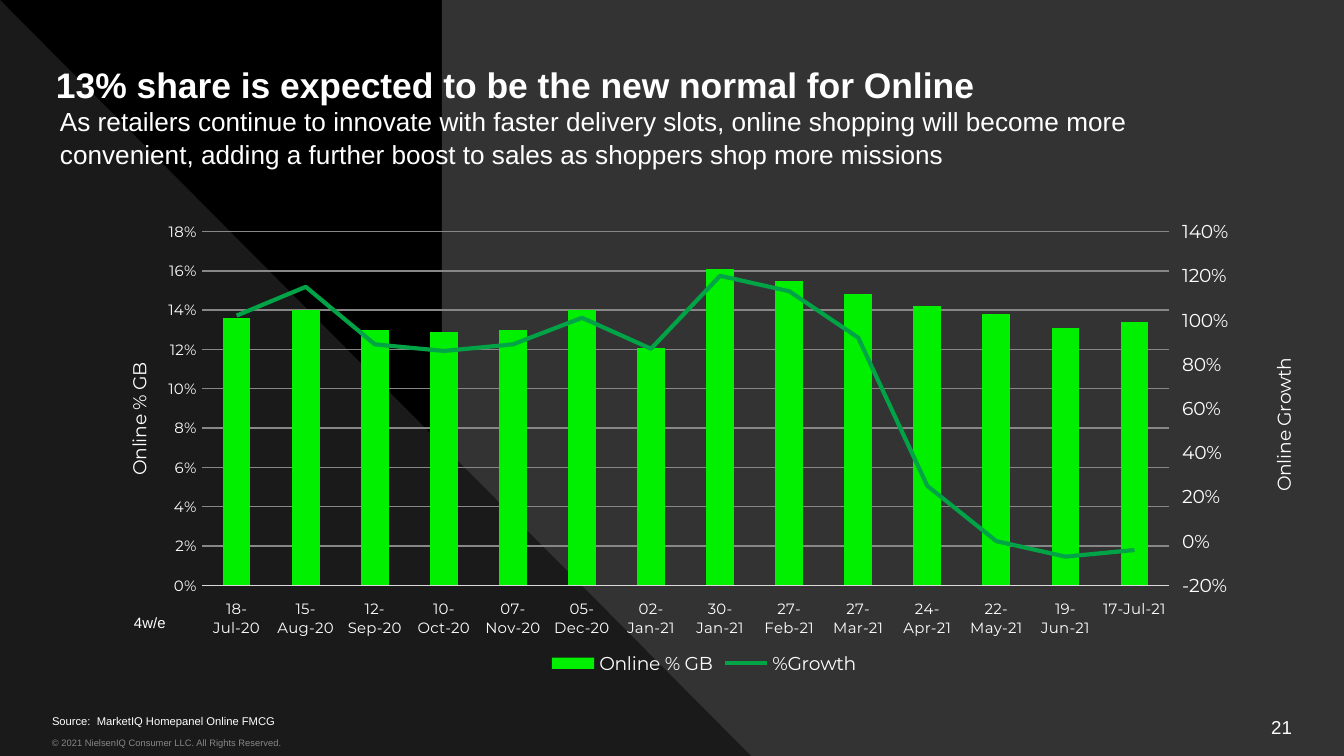
from copy import deepcopy
from lxml.etree import SubElement
from pptx import Presentation
from pptx.chart.axis import CategoryAxis, ValueAxis
from pptx.chart.data import CategoryChartData
from pptx.dml.color import RGBColor
from pptx.enum.chart import XL_CHART_TYPE as Kind, XL_LEGEND_POSITION as Legend
from pptx.enum.chart import XL_MARKER_STYLE as Marker, XL_TICK_MARK as Tick
from pptx.enum.chart import XL_TICK_LABEL_POSITION as Label
from pptx.enum.shapes import MSO_SHAPE as Shape
from pptx.enum.text import MSO_ANCHOR as Anchor, MSO_AUTO_SIZE as Fit, PP_ALIGN as Align
from pptx.oxml.ns import qn
from pptx.util import Pt

PX = 914400 / 134.4
WHITE, GRID = "FFFFFF", "D9D9D9"
hue = RGBColor.from_string


def write(box, text, spot, size, inset, color=WHITE, bold=False,
          anchor=Anchor.TOP, align=Align.LEFT):
    box.left, box.top, box.width, box.height = [round(n * PX) for n in spot]
    frame = box.text_frame
    frame.word_wrap, frame.auto_size = True, Fit.NONE
    frame.vertical_anchor = anchor
    frame.margin_left = frame.margin_right = round(inset[0] * PX)
    frame.margin_top = frame.margin_bottom = round(inset[1] * PX)
    para = frame.paragraphs[0]
    para.alignment, para.space_before = align, Pt(0)
    run = para.add_run()
    run.text = text
    font = run.font
    font.name, font.size, font.bold = "Arial", Pt(size), bold
    font.color.rgb = hue(color)
    return para


def place(part, inner=False, **spots):
    """Set a manual layout, in fractions of the chart."""
    node = part.find(qn("c:layout"))
    if node is None:
        node = SubElement(part, qn("c:layout"))
        part.insert(1 if part.find(qn("c:tx")) is not None else 0, node)
    lay = SubElement(node, qn("c:manualLayout"))
    if inner:
        SubElement(lay, qn("c:layoutTarget")).set("val", "inner")
    for key in ("x", "y"):
        SubElement(lay, qn(f"c:{key}Mode")).set("val", "edge")
    for key, val in spots.items():
        SubElement(lay, qn(f"c:{key}")).set("val", str(val))


deck = Presentation()
deck.slide_width, deck.slide_height = round(1344 * PX), round(756 * PX)
slide = deck.slides.add_slide(deck.slide_layouts[0])
shapes = slide.shapes

# Background
back = slide.background.fill
back.solid()
back.fore_color.rgb = hue("000000")
panels = [(Shape.RECTANGLE, 442, 902, "333333"), (Shape.RIGHT_TRIANGLE, 0, 751, "1A1A1A")]
for rank, (form, left, width, color) in enumerate(panels):
    panel = shapes.add_shape(form, round(left * PX), 0, round(width * PX), deck.slide_height)
    panel.shadow.inherit = False
    panel.fill.solid()
    panel.fill.fore_color.rgb = hue(color)
    panel.line.fill.background()
    shapes.element.insert(2 + rank, panel.element)

# Title and source
write(shapes.title, "13% share is expected to be the new normal for Online",
      (56, 50, 1280, 118), 19, (0, 13), bold=True)
write(slide.placeholders[1], "Source:  MarketIQ Homepanel Online FMCG",
      (52, 714, 1199, 27), 6, (0, 13), anchor=Anchor.BOTTOM)

# Chart data
days = ["18-Jul-20", "15-Aug-20", "12-Sep-20", "10-Oct-20", "07-Nov-20", "05-Dec-20",
        "02-Jan-21", "30-Jan-21", "27-Feb-21", "27-Mar-21", "24-Apr-21", "22-May-21",
        "19-Jun-21", "17-Jul-21"]
share = [0.136, 0.14, 0.13, 0.129, 0.13, 0.14, 0.121,
         0.161, 0.155, 0.148, 0.142, 0.138, 0.131, 0.134]
growth = [1.02, 1.15, 0.89, 0.86, 0.89, 1.01, 0.87,
          1.2, 1.13, 0.92, 0.25, 0, -0.07, -0.04]
data = CategoryChartData(number_format="0%")
data.categories = days
data.add_series("Online % GB", share)
data.add_series("%Growth", growth)
chart = shapes.add_chart(Kind.COLUMN_CLUSTERED, *[round(n * PX) for n in (92, 208, 1224, 472)],
                         data).chart
chart.has_title = False
chart.font.name, chart.font.size = "Montserrat", Pt(10)
chart.font.color.rgb = hue(WHITE)
chart.has_legend = True
chart.legend.position, chart.legend.include_in_layout = Legend.BOTTOM, False
chart.legend.font.name, chart.legend.font.size = "Montserrat", Pt(10)
chart.legend.font.color.rgb = hue(WHITE)

# Bars
bars = chart.plots[0]
bars.gap_width, bars.vary_by_categories = 150, False
fill = bars.series[0].format.fill
fill.solid()
fill.fore_color.rgb = hue("00F000")

# Date axis
dates = chart.category_axis
dates.major_tick_mark = Tick.NONE
dates.tick_label_position = Label.LOW
dates.format.line.color.rgb = hue(GRID)
dates.format.line.width = Pt(0.75)

# Second pair of axes
plot = chart.plots[0].series[0].format.fill and bars.series[0]._element.getparent().getparent()
cat, val = dates._element, chart.value_axis._element
cat2, val2 = deepcopy(cat), deepcopy(val)
val.addnext(val2)
val2.addnext(cat2)
for axis, own, other in ((cat2, "5001", "5002"), (val2, "5002", "5001")):
    axis.find(qn("c:axId")).set("val", own)
    axis.find(qn("c:crossAx")).set("val", other)
val2.find(qn("c:axPos")).set("val", "r")
val2.find(qn("c:crosses")).set("val", "max")
CategoryAxis(cat2).visible = False

# Growth line on the second axes
bar = plot.find(qn("c:barChart"))
line = plot.makeelement(qn("c:lineChart"))
bar.addnext(line)
SubElement(line, qn("c:grouping")).set("val", "standard")
SubElement(line, qn("c:varyColors")).set("val", "0")
ser = bar.findall(qn("c:ser"))[1]
for flag in ser.findall(qn("c:invertIfNegative")):
    ser.remove(flag)
line.append(ser)
SubElement(line, qn("c:marker")).set("val", "1")
for own in ("5001", "5002"):
    SubElement(line, qn("c:axId")).set("val", own)
trend = chart.plots[1].series[0]
trend.smooth, trend.marker.style = False, Marker.NONE
trend.format.line.color.rgb = hue("00A346")
trend.format.line.width = Pt(2.25)

# Value axes
scales = [(val, "Online % GB", 0, 0.18, 0.02, 8, Tick.NONE, 0.025, 0.32),
          (val2, "Online Growth", -0.2, 1.4, 0.2, 10, Tick.OUTSIDE, 0.96, 0.31)]
for part, name, low, high, step, size, tick, x, y in scales:
    axis = ValueAxis(part)
    axis.minimum_scale, axis.maximum_scale, axis.major_unit = low, high, step
    axis.major_tick_mark = tick
    axis.has_major_gridlines = part is val
    axis.format.line.fill.background()
    axis.tick_labels.number_format = "0%"
    axis.tick_labels.number_format_is_linked = False
    run = axis.axis_title.text_frame.paragraphs[0].add_run()
    run.text = name
    for font, points in ((axis.tick_labels.font, size), (run.font, 10)):
        font.name, font.size, font.bold = "Montserrat", Pt(points), False
        font.color.rgb = hue(WHITE)
    title = part.find(qn("c:title"))
    body = title.find(".//" + qn("a:bodyPr"))
    body.set("rot", "-5400000")
    body.set("vert", "horz")
    place(title, x=x, y=y)
grid = chart.value_axis.major_gridlines.format.line
grid.color.rgb, grid.width = hue(GRID), Pt(0.75)
dates.tick_labels.font.name, dates.tick_labels.font.size = "Montserrat", Pt(8)
dates.tick_labels.font.color.rgb = hue(WHITE)
place(plot, True, x=0.09, y=0.05, w=0.79, h=0.75)

# Notes around the chart
write(shapes.add_textbox(0, 0, 0, 0), "4w/e", (121, 607, 65, 32), 8, (13, 7))
lead = write(shapes.add_textbox(0, 0, 0, 0),
             "As retailers continue to innovate with faster delivery slots, online shopping will "
             "become more convenient, adding a further boost to sales as shoppers shop more missions",
             (47, 97, 1199, 77), 14, (13, 7))
lead.line_spacing = 1.05

# Footer
write(shapes.add_textbox(0, 0, 0, 0), "© 2021 NielsenIQ Consumer LLC. All Rights Reserved.",
      (52, 730, 745, 26), 5, (0, 7), "888888")
write(shapes.add_textbox(0, 0, 0, 0), "21", (989, 707, 303, 40), 10, (0, 7),
      anchor=Anchor.MIDDLE, align=Align.RIGHT)

deck.save("out.pptx")
